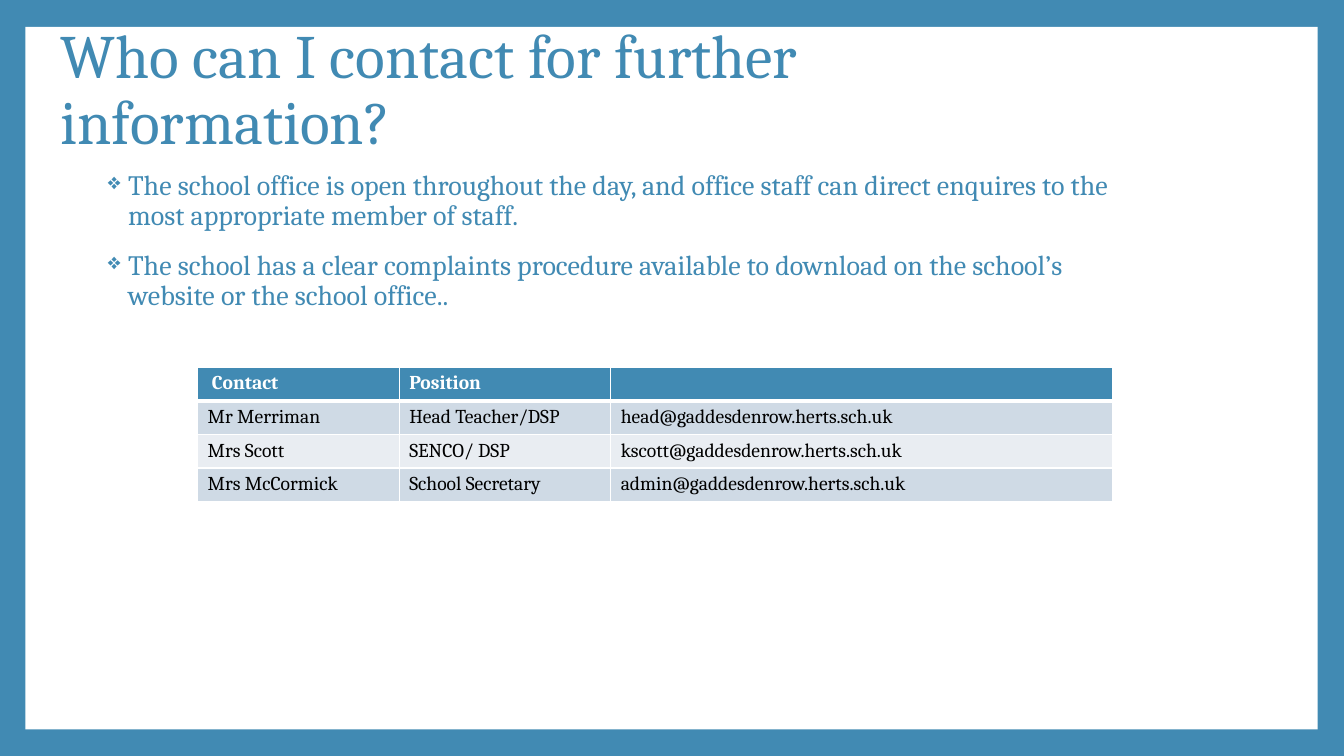
import pptx
import pptx.dml.color
import pptx.enum.shapes
import pptx.enum.text
import pptx.oxml
import pptx.oxml.ns
import pptx.util
from pptx.util import Cm, Pt

BLUE = pptx.dml.color.RGBColor(0x41, 0x8A, 0xB3)
WHITE = pptx.dml.color.RGBColor(0xFF, 0xFF, 0xFF)
BLACK = pptx.dml.color.RGBColor(0x00, 0x00, 0x00)
DARK_BAND = pptx.dml.color.RGBColor(0xCF, 0xDA, 0xE5)
LIGHT_BAND = pptx.dml.color.RGBColor(0xE9, 0xED, 0xF2)
NAMESPACE = pptx.oxml.ns.nsdecls("a")


def set_font(paragraph, size, color, bold=False):
    paragraph.font.name = "Cambria"
    paragraph.font.size = Pt(size)
    paragraph.font.color.rgb = color
    paragraph.font.bold = bold


def add_border(cell, side, width):
    """Add a white line to one side (L, R, T or B); call before filling the cell."""
    cell._tc.get_or_add_tcPr().append(pptx.oxml.parse_xml(
        f'<a:ln{side} {NAMESPACE} w="{Pt(width)}"><a:solidFill>'
        f'<a:srgbClr val="{WHITE}"/></a:solidFill></a:ln{side}>'))


presentation = pptx.Presentation()
presentation.slide_width = Cm(33.87)
presentation.slide_height = Cm(19.05)
slide = presentation.slides.add_slide(presentation.slide_layouts[6])
slide.background.fill.solid()
slide.background.fill.fore_color.rgb = BLUE

# White panel inside the blue frame
panel = slide.shapes.add_shape(
    pptx.enum.shapes.MSO_SHAPE.RECTANGLE, Cm(0.64), Cm(0.68), Cm(32.57), Cm(17.7))
panel.shadow.inherit = False
panel.fill.solid()
panel.fill.fore_color.rgb = WHITE
panel.line.fill.background()

# Title
title = slide.shapes.add_textbox(Cm(1.27), Cm(0.43), Cm(27.43), Cm(3.76)).text_frame
title.word_wrap = True
title.vertical_anchor = pptx.enum.text.MSO_ANCHOR.MIDDLE
title.text = "Who can I contact for further information?"
title.paragraphs[0].line_spacing = 0.9
set_font(title.paragraphs[0], 44, BLUE)

# Bulleted advice
advice = [
    "The school office is open throughout the day, and office staff can direct enquires "
    "to the most appropriate member of staff.",
    "The school has a clear complaints procedure available to download on the school’s "
    "website or the school office..",
]
body = slide.shapes.add_textbox(Cm(2.34), Cm(4.19), Cm(26.39), Cm(12.09)).text_frame
body.word_wrap = True
for index, sentence in enumerate(advice):
    paragraph = body.paragraphs[0] if index == 0 else body.add_paragraph()
    paragraph.text = sentence
    paragraph.line_spacing = 0.9
    paragraph.space_before = Pt(14 if index else 0)
    properties = paragraph._p.get_or_add_pPr()
    properties.set("marL", str(Cm(0.64)))
    properties.set("indent", str(Cm(-0.51)))
    for bullet in (f'<a:buClr {NAMESPACE}><a:srgbClr val="{BLUE}"/></a:buClr>',
                   f'<a:buSzPct {NAMESPACE} val="80000"/>',
                   f'<a:buChar {NAMESPACE} char="❖"/>'):
        properties.append(pptx.oxml.parse_xml(bullet))
    set_font(paragraph, 20, BLUE)

# Contact table
contacts = [
    (" Contact", "Position", ""),
    ("Mr Merriman", "Head Teacher/DSP", "head@gaddesdenrow.herts.sch.uk"),
    ("Mrs Scott", "SENCO/ DSP", "kscott@gaddesdenrow.herts.sch.uk"),
    ("Mrs McCormick", "School Secretary", "admin@gaddesdenrow.herts.sch.uk"),
]
column_widths = [5.08, 5.33, 12.65]
table = slide.shapes.add_table(
    len(contacts), len(column_widths), Cm(4.98), Cm(9.25),
    Cm(sum(column_widths)), Cm(0.74 * len(contacts))).table
table.first_row = False
table.horz_banding = False
for column, width in zip(table.columns, column_widths):
    column.width = Cm(width)

for row_index, contact in enumerate(contacts):
    is_header = row_index == 0
    band = BLUE if is_header else DARK_BAND if row_index % 2 else LIGHT_BAND
    for column_index, text in enumerate(contact):
        cell = table.cell(row_index, column_index)
        for side in "LRTB":
            thick = (is_header and side == "B") or (row_index == 1 and side == "T")
            add_border(cell, side, 3 if thick else 1)
        cell.fill.solid()
        cell.fill.fore_color.rgb = band
        paragraph = cell.text_frame.paragraphs[0]
        if text:
            paragraph.text = text
        else:
            # The empty cell needs its own text size to keep the row low
            paragraph._p.append(pptx.oxml.parse_xml(
                f'<a:endParaRPr {NAMESPACE} sz="1400"/>'))
        set_font(paragraph, 14, WHITE if is_header else BLACK, is_header)

presentation.save("out.pptx")
